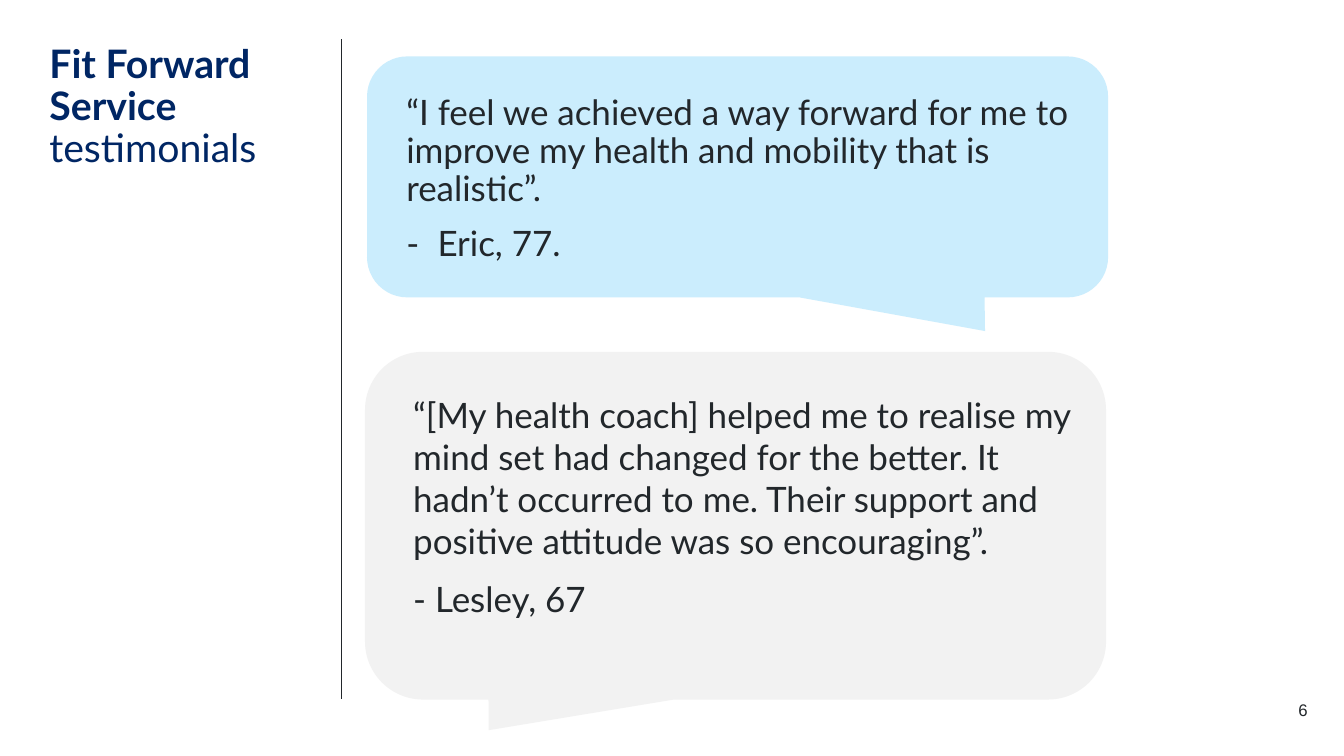
from pptx import Presentation
from pptx.dml.color import RGBColor
from pptx.enum.shapes import MSO_CONNECTOR as Line, MSO_SHAPE as Shape
from pptx.enum.text import MSO_ANCHOR as Anchor, MSO_AUTO_SIZE as Fit, PP_ALIGN as Align
from pptx.oxml.ns import qn
from pptx.util import Inches, Pt
from lxml import etree

COLORS = {"navy": "002664", "ink": "22272B", "sky": "CBEDFD", "grey": "F2F2F2"}

TITLE = [("Fit Forward Service", True), ("testimonials", False)]
RULE = (3.39, 0.39, 3.39, 6.93)
BUBBLES = [
    ((3.62, 3.49, 7.35, 3.45), "grey", (-0.333, 0.588, 0.167)),
    ((3.64, 0.56, 7.35, 2.39), "sky", (0.334, 0.64, 0.167)),
]
QUOTE = {"size": 25, "name": "Lato"}
NUMBER = {"size": 12, "name": "Arial"}
TEXTS = [
    ((4.03, 0.95, 6.9, 2), (0, 0), QUOTE, [
        ("“I feel we achieved a way forward for me to improve my health "
         "and mobility that is realistic”.",
         {"line_spacing": 0.9, "space_after": Pt(12)}, 0, 0, None),
        ("Eric, 77.", {"line_spacing": 0.9, "space_after": Pt(6)}, 0.31, -0.31, "-"),
    ]),
    ((12.43, 6.96, 0.54, 0.2), (0, 0), NUMBER, [
        ("6", {"line_spacing": 0.9, "alignment": Align.RIGHT}, 0, 0, None),
    ]),
    ((3.33, 3.85, 7.46, 2.79), (0.1, 0.05), QUOTE, [
        ("“[My health coach] helped me to realise my mind set had changed for "
         "the better. It hadn’t occurred to me. Their support and positive "
         "attitude was so encouraging”.",
         {"space_after": Pt(12)}, 0.67, 0, None),
        ("- Lesley, 67", {}, 0.67, 0, None),
    ]),
]


def color(name):
    return RGBColor.from_string(COLORS[name])


def apply(item, values):
    for key, value in values.items():
        setattr(item, key, value)


def style(run, size, name, ink, bold=False):
    apply(run.font, {"size": Pt(size), "name": name, "bold": bold})
    run.font.color.rgb = color(ink)


def frame(box, pad):
    side, edge = map(Inches, pad)
    apply(box.text_frame, {
        "word_wrap": True, "auto_size": Fit.NONE, "vertical_anchor": Anchor.TOP,
        "margin_left": side, "margin_right": side,
        "margin_top": edge, "margin_bottom": edge,
    })
    return box.text_frame


def indent(para, left, first, mark):
    props = para._p.get_or_add_pPr()
    props.set("marL", str(Inches(left)))
    props.set("indent", str(Inches(first)))
    if mark:
        etree.SubElement(props, qn("a:buFont")).set("typeface", "Lato")
        etree.SubElement(props, qn("a:buChar")).set("char", mark)


def add_title(slide):
    title = slide.shapes.title
    apply(title, dict(zip(("left", "top", "width", "height"),
                          map(Inches, (0.39, 0.39, 2.76, 6.54)))))
    para = frame(title, (0.1, 0.05)).paragraphs[0]
    apply(para, {"alignment": Align.LEFT, "line_spacing": 0.9, "space_after": Pt(6)})
    for i, (words, bold) in enumerate(TITLE):
        if i:
            para.add_line_break()
        run = para.add_run()
        run.text = words
        style(run, 28, "Lato", "navy", bold)


def add_rule(slide):
    rule = slide.shapes.add_connector(Line.STRAIGHT, *map(Inches, RULE))
    rule.line.color.rgb = color("ink")
    rule.line.width = Pt(0.75)
    etree.SubElement(rule._element.spPr, qn("a:effectLst"))


def add_bubble(slide, place, fill, bends):
    bubble = slide.shapes.add_shape(Shape.ROUNDED_RECTANGULAR_CALLOUT, *map(Inches, place))
    bubble.shadow.inherit = False
    bubble.fill.solid()
    bubble.fill.fore_color.rgb = color(fill)
    bubble.line.fill.background()
    for i, bend in enumerate(bends):
        bubble.adjustments[i] = bend


def add_text(slide, place, pad, font, paras):
    body = frame(slide.shapes.add_textbox(*map(Inches, place)), pad)
    for i, (words, values, left, first, mark) in enumerate(paras):
        para = body.add_paragraph() if i else body.paragraphs[0]
        apply(para, values)
        indent(para, left, first, mark)
        run = para.add_run()
        run.text = words
        style(run, ink="ink", **font)


def main():
    deck = Presentation()
    apply(deck, {"slide_width": Inches(13.33), "slide_height": Inches(7.5)})
    slide = deck.slides.add_slide(deck.slide_layouts[5])
    add_rule(slide)
    for bubble in BUBBLES:
        add_bubble(slide, *bubble)
    add_title(slide)
    for text in TEXTS:
        add_text(slide, *text)
    deck.save("out.pptx")


if __name__ == "__main__":
    main()
